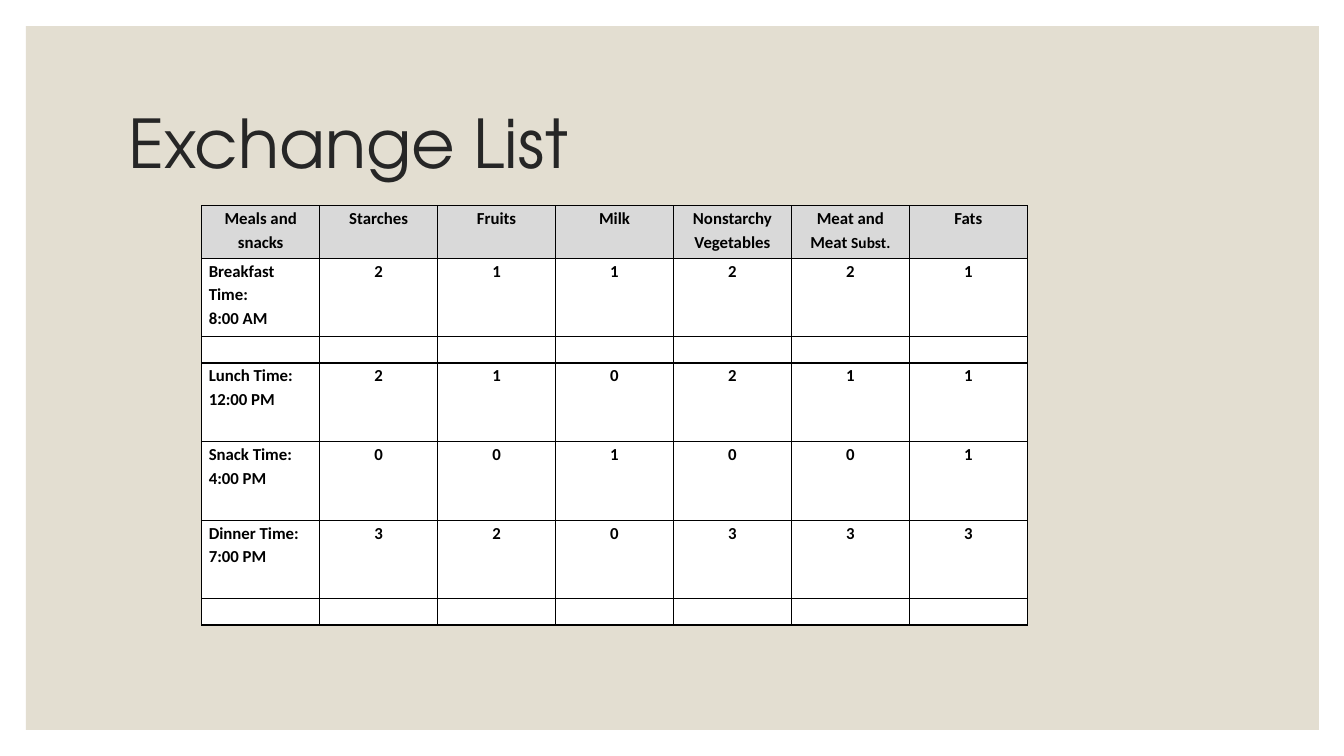
import lxml.etree
import pptx
import pptx.dml.color
import pptx.enum.shapes
import pptx.enum.text
import pptx.oxml.ns
import pptx.util

RGBColor = pptx.dml.color.RGBColor
PP_ALIGN = pptx.enum.text.PP_ALIGN
qn = pptx.oxml.ns.qn

SAND = RGBColor(0xE3, 0xDE, 0xD1)
INK = RGBColor(0x26, 0x26, 0x26)
BLACK = RGBColor(0, 0, 0)
WHITE = RGBColor(0xFF, 0xFF, 0xFF)
HEADER_GREY = RGBColor(0xD9, 0xD9, 0xD9)

FOOD_GROUPS = ["Meals and snacks", "Starches", "Fruits", "Milk",
               "Nonstarchy Vegetables", "Meat and Meat |Subst.", "Fats"]
BLANK = [""] * len(FOOD_GROUPS)
EXCHANGES = [
    FOOD_GROUPS,
    ["Breakfast Time:\n8:00 AM", 2, 1, 1, 2, 2, 1],
    BLANK,
    ["Lunch Time:\n12:00 PM", 2, 1, 0, 2, 1, 1],
    ["Snack Time:\n4:00 PM", 0, 0, 1, 0, 0, 1],
    ["Dinner Time:\n7:00 PM", 3, 2, 0, 3, 3, 3],
    BLANK,
]
MEAL_HEIGHTS = [2, 3, 1, 3, 3, 3, 1]


class ExchangeSlide:
    """Places elements on a grid of columns and rows measured from the top left."""
    column = 1.17
    row = 0.26
    title_font = "TeX Gyre Adventor"
    table_font = "Calibri"
    table_size = 12
    small_size = 11

    def __init__(self, deck):
        self.slide = deck.slides.add_slide(deck.slide_layouts[5])

    def across(self, columns):
        return pptx.util.Inches(columns * self.column)

    def down(self, rows):
        return pptx.util.Inches(rows * self.row)

    def box(self, left, top, width, height):
        return self.across(left), self.down(top), self.across(width), self.down(height)

    def add_panel(self, *place):
        """Adds the sand panel behind the title."""
        panel = self.slide.shapes.add_shape(
            pptx.enum.shapes.MSO_SHAPE.RECTANGLE, *self.box(*place))
        panel.shadow.inherit = False
        panel.fill.solid()
        panel.fill.fore_color.rgb = SAND
        panel.line.fill.background()
        self.slide.shapes.title.element.addprevious(panel.element)

    def add_title(self, wording, *place):
        title = self.slide.shapes.title
        title.left, title.top, title.width, title.height = self.box(*place)
        title.text_frame.text = wording
        title.text_frame.vertical_anchor = pptx.enum.text.MSO_ANCHOR.MIDDLE
        heading = title.text_frame.paragraphs[0]
        heading.alignment = PP_ALIGN.LEFT
        heading.line_spacing = 0.9
        self.style_font(heading.font, self.title_font, 48, INK)

    def add_table(self, entries, heights, left, top):
        columns = len(entries[0])
        frame = self.slide.shapes.add_table(
            len(entries), columns, *self.box(left, top, columns, sum(heights)))
        table = frame.table
        table.first_row = table.horz_banding = False
        for column in table.columns:
            column.width = self.across(1)
        for row, height in zip(table.rows, heights):
            row.height = self.down(height)
        for r, row_entries in enumerate(entries):
            for c, entry in enumerate(row_entries):
                centred = r == 0 or c > 0
                self.fill_cell(table.cell(r, c), str(entry),
                               HEADER_GREY if r == 0 else WHITE,
                               PP_ALIGN.CENTER if centred else PP_ALIGN.LEFT)

    def fill_cell(self, cell, entry, shade, alignment):
        """Writes an entry; newlines part paragraphs and a bar starts smaller text."""
        cell.margin_left = cell.margin_right = pptx.util.Inches(0.07)
        cell.margin_top = cell.margin_bottom = 0
        self.draw_borders(cell)
        cell.fill.solid()
        cell.fill.fore_color.rgb = shade
        for index, line in enumerate(entry.split("\n")):
            frame = cell.text_frame
            paragraph = frame.add_paragraph() if index else frame.paragraphs[0]
            paragraph.alignment = alignment
            paragraph.line_spacing = 1.15
            self.style_font(paragraph.font, self.table_font, self.table_size, BLACK, True)
            wording, _, small = line.partition("|")
            if wording:
                paragraph.add_run().text = wording
            else:
                lxml.etree.SubElement(paragraph._p, qn("a:endParaRPr"),
                                      sz=str(self.table_size * 100))
            if small:
                small_run = paragraph.add_run()
                small_run.text = small
                small_run.font.size = pptx.util.Pt(self.small_size)

    @staticmethod
    def draw_borders(cell):
        properties = cell._tc.get_or_add_tcPr()
        for side in ("L", "R", "T", "B"):
            border = lxml.etree.SubElement(properties, qn(f"a:ln{side}"),
                                           w=str(pptx.util.Pt(1)))
            ink = lxml.etree.SubElement(border, qn("a:solidFill"))
            lxml.etree.SubElement(ink, qn("a:srgbClr"), val=str(BLACK))

    @staticmethod
    def style_font(font, name, size, color, bold=False):
        font.name = name
        font.size = pptx.util.Pt(size)
        font.color.rgb = color
        font.bold = bold


def main():
    deck = pptx.Presentation()
    deck.slide_width = pptx.util.Inches(13.33)
    deck.slide_height = pptx.util.Inches(7.5)
    exchange_list = ExchangeSlide(deck)
    exchange_list.add_panel(0.22, 1, 10.96, 26.85)
    exchange_list.add_title("Exchange List", 1, 2.7, 9.4, 5.77)
    exchange_list.add_table(EXCHANGES, MEAL_HEIGHTS, 1.71, 7.85)
    deck.save("out.pptx")


if __name__ == "__main__":
    main()
